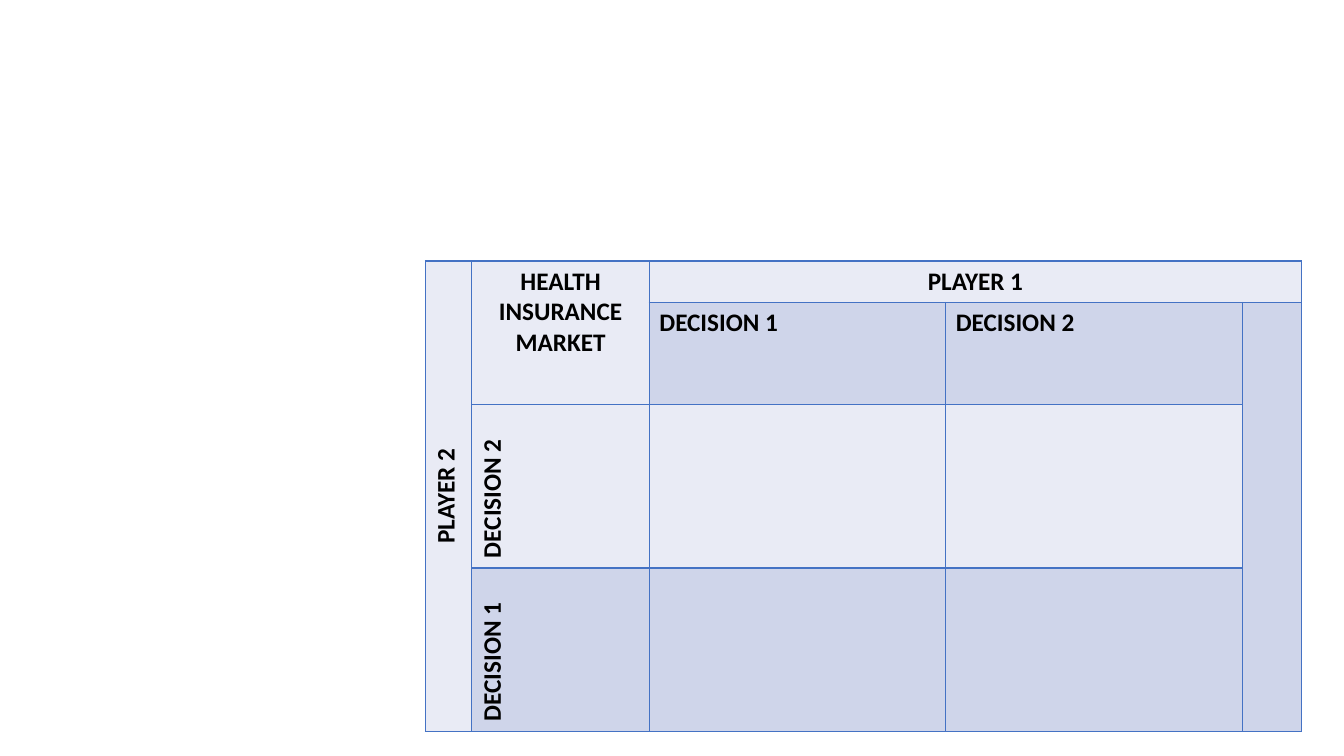
from lxml.etree import SubElement
from pptx import Presentation
from pptx.dml.color import RGBColor
from pptx.enum.text import PP_ALIGN
from pptx.oxml.ns import qn
from pptx.util import Inches, Pt

BLACK = RGBColor(0x00, 0x00, 0x00)
BORDER_BLUE = RGBColor(0x44, 0x72, 0xC4)
PALE_BAND = RGBColor(0xE9, 0xEB, 0xF5)
DEEP_BAND = RGBColor(0xCF, 0xD5, 0xEA)

COLUMN_WIDTHS = (0.46, 1.76, 2.94, 2.94, 0.59)
ROW_HEIGHTS = (0.41, 0.81, 1.62, 1.62)
MERGES = (((0, 0), (3, 0)), ((0, 1), (1, 1)), ((0, 2), (0, 4)), ((1, 4), (3, 4)))
LABELS = (
    (0, 0, "PLAYER 2", PP_ALIGN.CENTER, True),
    (0, 1, "HEALTH INSURANCE MARKET", PP_ALIGN.CENTER, False),
    (0, 2, "PLAYER 1", PP_ALIGN.CENTER, False),
    (1, 2, "DECISION 1", PP_ALIGN.LEFT, False),
    (1, 3, "DECISION 2", PP_ALIGN.LEFT, False),
    (2, 1, "DECISION 2", PP_ALIGN.LEFT, True),
    (3, 1, "DECISION 1", PP_ALIGN.LEFT, True),
)


class GameSlide:
    font_name = "Calibri"
    font_size = Pt(18)
    border_width = Pt(1)

    def __init__(self, slide):
        self.slide = slide

    def matrix(self, left, top):
        width, height = sum(COLUMN_WIDTHS), sum(ROW_HEIGHTS)
        matrix = self.slide.shapes.add_table(
            len(ROW_HEIGHTS), len(COLUMN_WIDTHS),
            Inches(left), Inches(top), Inches(width), Inches(height),
        ).table
        matrix.first_row = matrix.horz_banding = False
        for column, column_width in zip(matrix.columns, COLUMN_WIDTHS):
            column.width = Inches(column_width)
        for row_index, row_height in enumerate(ROW_HEIGHTS):
            matrix.rows[row_index].height = Inches(row_height)
            band = DEEP_BAND if row_index % 2 else PALE_BAND
            for column_index in range(len(COLUMN_WIDTHS)):
                self.cell(matrix.cell(row_index, column_index), band)
        for first, last in MERGES:
            matrix.cell(*first).merge(matrix.cell(*last))
        return matrix

    def cell(self, cell, band):
        properties = cell._tc.get_or_add_tcPr()
        for side in ("a:lnL", "a:lnR", "a:lnT", "a:lnB"):
            border = SubElement(properties, qn(side), w=str(self.border_width))
            stroke = SubElement(border, qn("a:solidFill"))
            SubElement(stroke, qn("a:srgbClr"), val=str(BORDER_BLUE))
        cell.fill.solid()
        cell.fill.fore_color.rgb = band

    def label(self, cell, wording, alignment, upright):
        cell.text_frame.text = wording
        paragraph = cell.text_frame.paragraphs[0]
        paragraph.alignment = alignment
        font = paragraph.runs[0].font
        font.name = self.font_name
        font.size = self.font_size
        font.bold = True
        font.color.rgb = BLACK
        if upright:
            cell._tc.get_or_add_tcPr().set("vert", "vert270")


def main():
    presentation = Presentation()
    presentation.slide_width = Inches(13.33)
    presentation.slide_height = Inches(7.5)
    game = GameSlide(presentation.slides.add_slide(presentation.slide_layouts[6]))
    matrix = game.matrix(4.22, 2.59)
    for row, column, wording, alignment, upright in LABELS:
        game.label(matrix.cell(row, column), wording, alignment, upright)
    presentation.save("out.pptx")


if __name__ == "__main__":
    main()
